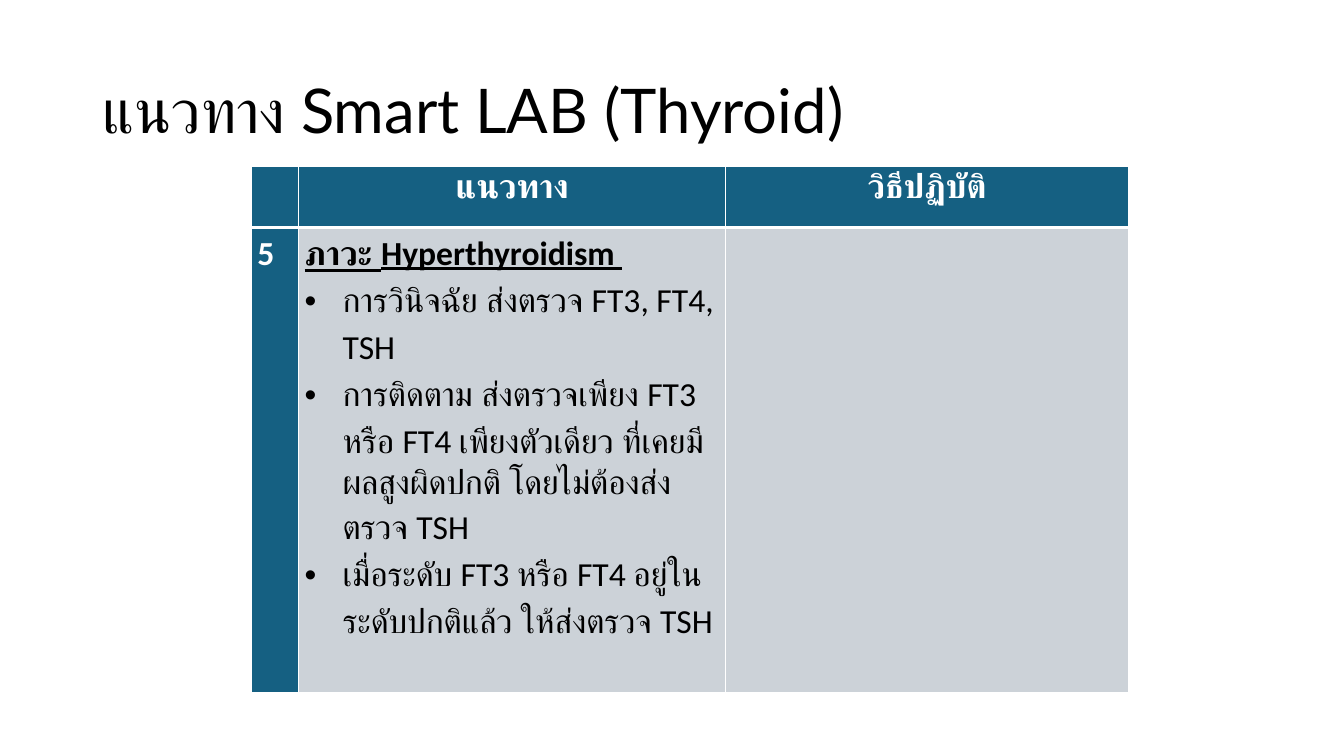
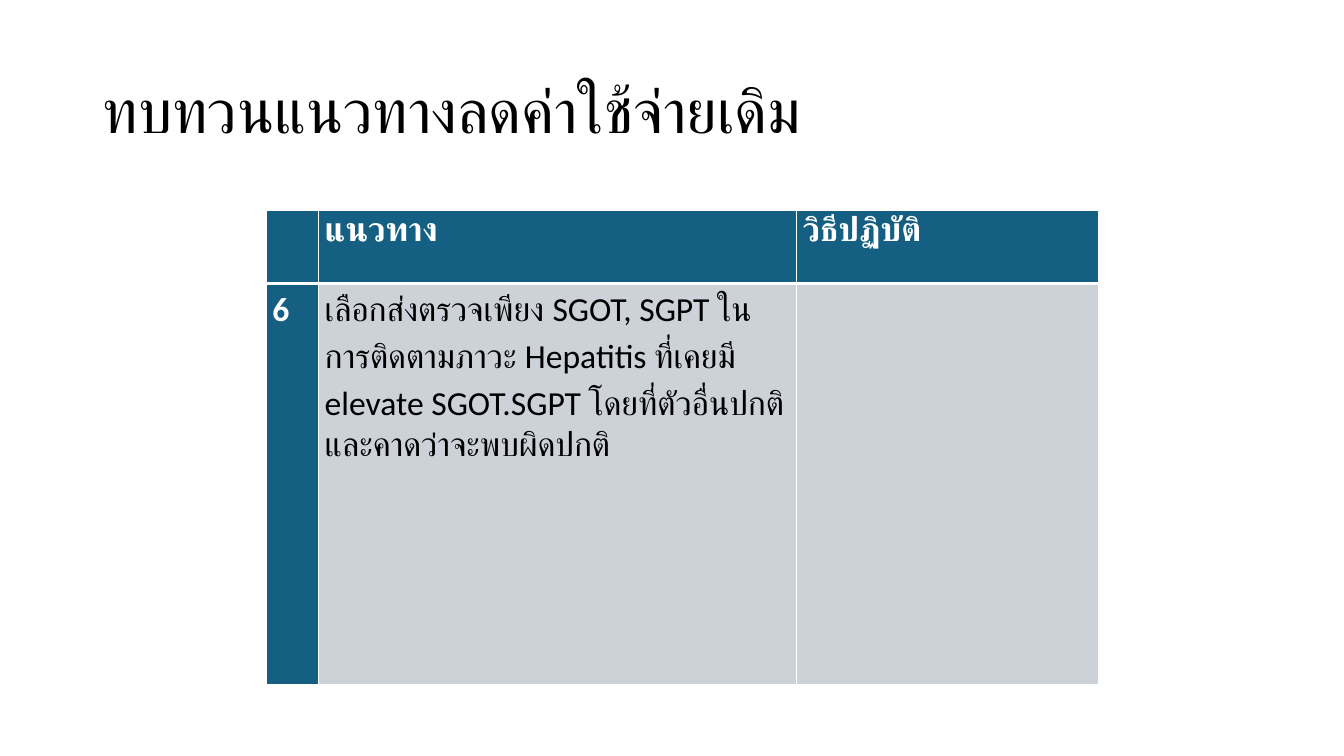
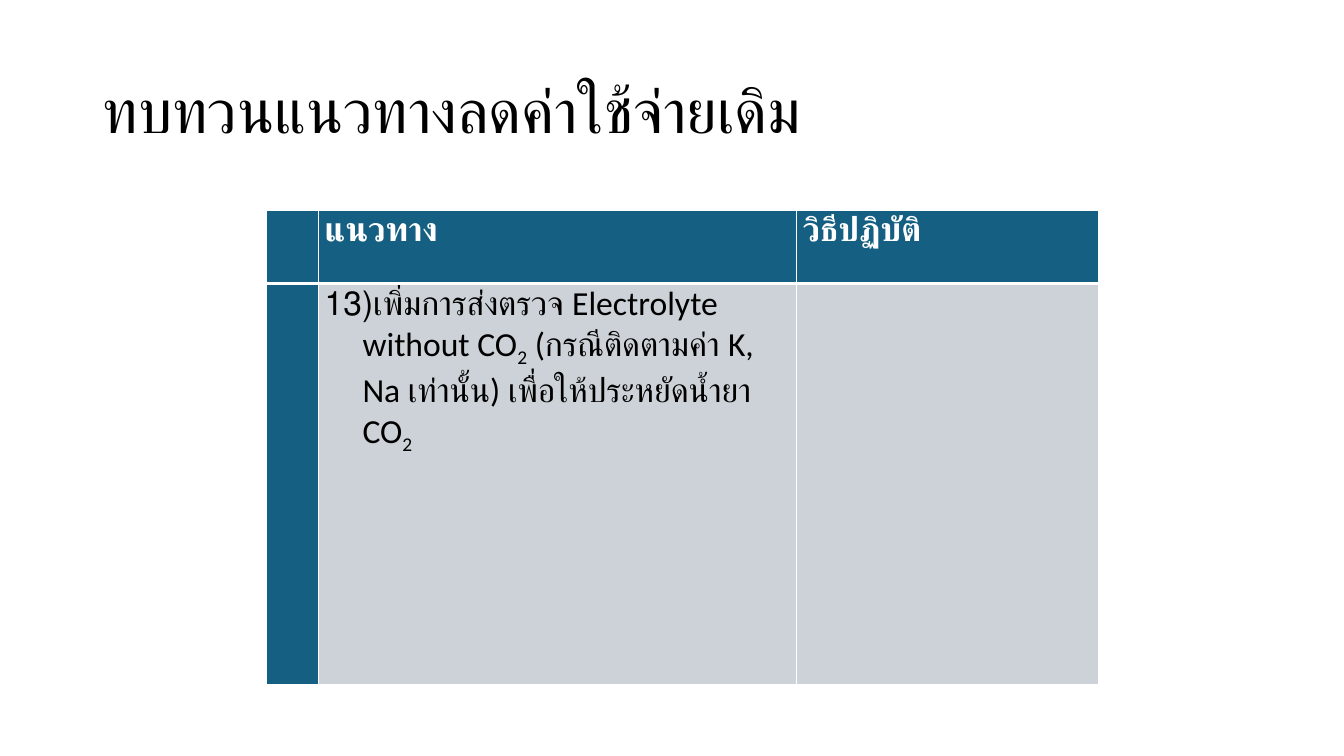
from lxml.etree import SubElement
from pptx import Presentation
from pptx.dml.color import RGBColor as Color
from pptx.enum.text import MSO_ANCHOR as Anchor, MSO_AUTO_SIZE as AutoSize, PP_ALIGN as Align
from pptx.oxml.ns import qn
from pptx.util import Pt

COLORS = {"teal": "156082", "grey": "CCD2D8", "white": "FFFFFF", "black": "000000"}
HANGING = 27
HEADINGS = ("", "แนวทาง", "วิธีปฏิบัติ")

# Where the table sits, and how its headings are aligned
WIDE = {"left": 179.4, "top": 119.2, "columns": (33.8, 305.3, 287.4),
        "rows": (43.2, 332.4), "headings": Align.CENTER}
NARROW = {"left": 190, "top": 150, "columns": (37.5, 341.3, 216),
          "rows": (52.6, 286.6), "headings": Align.LEFT}

# Title, table layout, row number, paragraphs as (kind, runs)
SLIDES = [
    ("แนวทาง Smart LAB (Thyroid)", WIDE, "5", [
        ("heading", ["ภาวะ Hyperthyroidism "]),
        ("bullet", ["การวินิจฉัย ส่งตรวจ FT3, FT4, TSH"]),
        ("bullet", ["การติดตาม ส่งตรวจเพียง FT3 หรือ FT4 เพียงตัวเดียว "
                    "ที่เคยมีผลสูงผิดปกติ โดยไม่ต้องส่งตรวจ TSH"]),
        ("bullet", ["เมื่อระดับ FT3 หรือ FT4 อยู่ในระดับปกติแล้ว ให้ส่งตรวจ TSH"]),
    ]),
    ("ทบทวนแนวทางลดค่าใช้จ่ายเดิม", NARROW, "6", [
        ("plain", ["เลือกส่งตรวจเพียง SGOT, SGPT ในการติดตามภาวะ Hepatitis ที่เคยมี "
                   "elevate SGOT.SGPT โดยที่ตัวอื่นปกติ และคาดว่าจะพบผิดปกติ"]),
    ]),
    ("ทบทวนแนวทางลดค่าใช้จ่ายเดิม", NARROW, "", [
        ("number", ["เพิ่มการส่งตรวจ ", "Electrolyte without CO", "2",
                    " (กรณีติดตามค่า K, Na เท่านั้น) เพื่อให้ประหยัดน้ำยา CO", "2"]),
    ]),
]


def format_cell(cell, fill, is_header):
    """Set the margins, borders and fill of a table cell."""
    cell.margin_left = cell.margin_right = Pt(4.5)
    cell.margin_top = cell.margin_bottom = 0
    properties = cell._tc.get_or_add_tcPr()
    for side in ("L", "R", "T", "B"):
        thick = side == ("B" if is_header else "T")
        line = SubElement(properties, qn(f"a:ln{side}"), w=str(Pt(3 if thick else 1)))
        color = SubElement(SubElement(line, qn("a:solidFill")), qn("a:srgbClr"))
        color.set("val", COLORS["white"])
    cell.fill.solid()
    cell.fill.fore_color.rgb = Color.from_string(COLORS[fill])


def write_paragraph(paragraph, runs, kind, color, bold=False):
    """Fill a table paragraph, with its bullet or number if it has one."""
    if kind in ("bullet", "number"):
        properties = paragraph._p.get_or_add_pPr()
        properties.set("marL", str(Pt(HANGING)))
        properties.set("indent", str(-Pt(HANGING)))
        SubElement(properties, qn("a:buFont"), typeface="Arial")
        if kind == "bullet":
            SubElement(properties, qn("a:buChar"), char="•")
        else:
            SubElement(properties, qn("a:buAutoNum"), type="arabicParenR", startAt="13")
    if kind != "number":
        paragraph.line_spacing = 1.15
    font = paragraph.font
    font.name, font.size, font.bold = "Calibri", Pt(24), bold
    font.underline = kind == "heading"
    font.color.rgb = Color.from_string(COLORS[color])
    for index, text in enumerate(runs):
        run = paragraph.add_run()
        run.text = text
        if kind == "number" and index == 0:
            run.font.name = "Arial"
        if text == "2":
            run._r.get_or_add_rPr().set("baseline", "-25000")


presentation = Presentation()
presentation.slide_width, presentation.slide_height = Pt(960), Pt(540)

for title_text, layout, number, paragraphs in SLIDES:
    slide = presentation.slides.add_slide(presentation.slide_layouts[5])

    # Title
    title = slide.shapes.title
    title.left, title.top, title.width, title.height = Pt(66), Pt(28.75), Pt(828), Pt(104.4)
    frame = title.text_frame
    frame.text = title_text
    frame.auto_size = AutoSize.NONE
    frame.vertical_anchor = Anchor.MIDDLE
    paragraph = frame.paragraphs[0]
    paragraph.alignment = Align.LEFT
    paragraph.line_spacing = 0.9
    paragraph.font.name, paragraph.font.size = "Lato", Pt(44)
    paragraph.font.color.rgb = Color.from_string(COLORS["black"])

    # Table grid
    columns, rows = layout["columns"], layout["rows"]
    table = slide.shapes.add_table(
        len(rows), len(columns), Pt(layout["left"]), Pt(layout["top"]),
        Pt(sum(columns)), Pt(sum(rows))).table
    for column, width in zip(table.columns, columns):
        column.width = Pt(width)
    for row, height in zip(table.rows, rows):
        row.height = Pt(height)

    # Heading row
    for column, heading in enumerate(HEADINGS):
        cell = table.cell(0, column)
        format_cell(cell, "teal", True)
        paragraph = cell.text_frame.paragraphs[0]
        paragraph.alignment = layout["headings"]
        write_paragraph(paragraph, [heading] if heading else [], "plain", "white", True)

    # Body row
    for column, fill in enumerate(("teal", "grey", "grey")):
        format_cell(table.cell(1, column), fill, False)
    write_paragraph(table.cell(1, 0).text_frame.paragraphs[0],
                    [number] if number else [], "plain", "white", True)
    frame = table.cell(1, 1).text_frame
    for index, (kind, runs) in enumerate(paragraphs):
        paragraph = frame.add_paragraph() if index else frame.paragraphs[0]
        write_paragraph(paragraph, runs, kind, "black", kind == "heading")

presentation.save("out.pptx")
